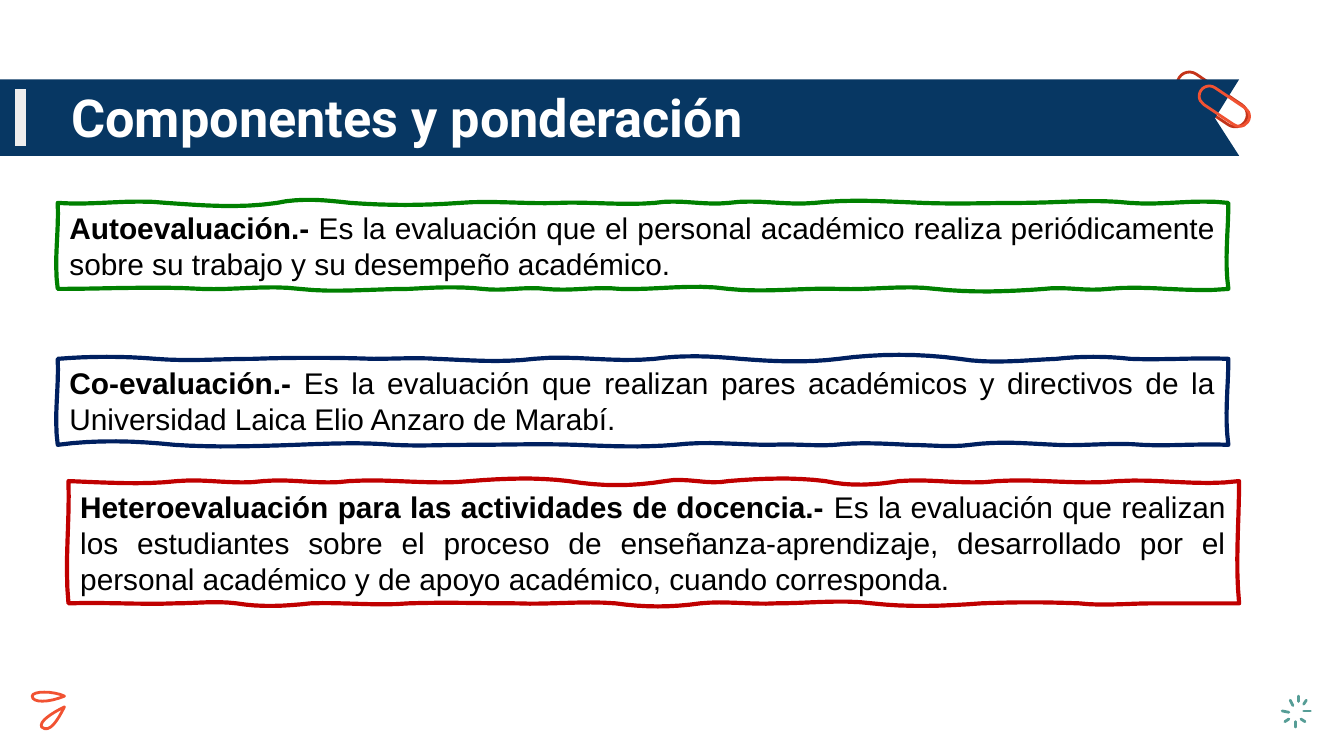
from pptx import Presentation
from pptx.dml.color import RGBColor
from pptx.enum.shapes import MSO_CONNECTOR, MSO_SHAPE
from pptx.enum.text import MSO_ANCHOR, MSO_AUTO_SIZE, PP_ALIGN
from pptx.oxml.ns import qn
from pptx.util import Inches, Pt
from lxml import etree

ROUNDED, STRAIGHT = MSO_SHAPE.ROUNDED_RECTANGLE, MSO_CONNECTOR.STRAIGHT
MIDDLE, NO_AUTOFIT = MSO_ANCHOR.MIDDLE, MSO_AUTO_SIZE.NONE
LEFT, JUSTIFY = PP_ALIGN.LEFT, PP_ALIGN.JUSTIFY

THEME = {
    "banner": RGBColor.from_string("073763"), "tab": RGBColor.from_string("EEEEEE"),
    "white": RGBColor.from_string("FFFFFF"), "black": RGBColor.from_string("000000"),
    "orange": RGBColor.from_string("F15232"), "rust": RGBColor.from_string("C4341A"),
    "teal": RGBColor.from_string("569D96"), "green": RGBColor.from_string("008000"),
    "navy": RGBColor.from_string("002060"), "red": RGBColor.from_string("C00000"),
    "title_font": "Roboto", "body_font": "Arial",
    "title_size": Pt(28), "body_size": Pt(16), "box_line": Pt(2.25), "thin_line": Pt(1.5),
}
# The grid has cells of one inch: 10 columns on a 16:9 slide
CELL = Inches(1)
COLUMNS = 10
CURVE_STEPS = 8

presentation = Presentation()
presentation.slide_width = COLUMNS * CELL
presentation.slide_height = COLUMNS * CELL * 9 // 16
slide = presentation.slides.add_slide(presentation.slide_layouts[5])
shapes = slide.shapes


def add_outline(corners):
    """Draw a closed shape through points given in grid cells."""
    points = [(round(x * CELL), round(y * CELL)) for x, y in corners]
    builder = shapes.build_freeform(*points[0])
    builder.add_line_segments(points[1:], close=True)
    shape = builder.convert_to_shape()
    shape.shadow.inherit = False
    return shape


def add_curved_outline(start, curves, color, width):
    """Draw an unfilled outline from cubic curves (control, control, end)."""
    points, current = [start], start
    for first, second, end in curves:
        for step in range(1, CURVE_STEPS + 1):
            t = step / CURVE_STEPS
            u = 1 - t
            points.append(tuple(
                u**3 * a + 3 * u * u * t * b + 3 * u * t * t * c + t**3 * d
                for a, b, c, d in zip(current, first, second, end)))
        current = end
    shape = add_outline(points)
    shape.fill.background()
    shape.line.color.rgb = color
    shape.line.width = width
    return shape


# Title band and paper clip, from back to front: loop, band, tab, loop
# Clip loops: center column, center row, length, height, color
clip_loops = [(9.02, 0.74, 0.59, 0.18, "rust"), (9.11, 0.79, 0.42, 0.15, "orange")]
bands = [
    ([(0, 0.59), (0, 1.16), (9.22, 1.16), (9.04, 0.88), (9.22, 0.59)], "banner"),
    ([(0.11, 0.66), (0.11, 1.09), (0.19, 1.09), (0.19, 0.66)], "tab"),
]
for (center_x, center_y, length, height, loop_color), (corners, band_color) in zip(
        clip_loops, bands):
    loop = shapes.add_shape(
        ROUNDED, *(round(value * CELL) for value in
                   (center_x - length / 2, center_y - height / 2, length, height)))
    loop.adjustments[0] = 0.5
    loop.rotation = 33.8
    loop.shadow.inherit = False
    loop.fill.background()
    loop.line.color.rgb = THEME[loop_color]
    loop.line.width = THEME["thin_line"]

    band = add_outline(corners)
    band.fill.solid()
    band.fill.fore_color.rgb = THEME[band_color]
    band.line.fill.background()

# Starburst in the bottom right corner
rays = [
    (9.66, 5.18, 9.66, 5.22), (9.6, 5.21, 9.62, 5.25), (9.54, 5.29, 9.59, 5.3),
    (9.56, 5.37, 9.59, 5.35), (9.64, 5.37, 9.64, 5.41), (9.68, 5.35, 9.71, 5.37),
    (9.7, 5.29, 9.75, 5.29), (9.72, 5.21, 9.7, 5.24),
]
for ray_ends in rays:
    ray = shapes.add_connector(STRAIGHT, *(round(value * CELL) for value in ray_ends))
    ray.line.color.rgb = THEME["teal"]
    ray.line.width = THEME["thin_line"]
    ray.element.spPr.find(qn("a:ln")).set("cap", "rnd")
    etree.SubElement(ray.element.spPr, qn("a:effectLst"))

# Two petals in the bottom left corner
petals = [
    ((0.48, 5.18), [((0.4, 5.14), (0.24, 5.14), (0.24, 5.18)),
                    ((0.24, 5.23), (0.36, 5.23), (0.48, 5.18))]),
    ((0.48, 5.26), [((0.38, 5.31), (0.29, 5.37), (0.31, 5.41)),
                    ((0.37, 5.46), (0.43, 5.36), (0.48, 5.26))]),
]
for tip, curves in petals:
    add_curved_outline(tip, curves, THEME["orange"], THEME["thin_line"])

# Title, brought in front of its band
title = shapes.title
title.left, title.top = round(0.43 * CELL), round(0.61 * CELL)
title.width, title.height = round(8.79 * CELL), round(0.52 * CELL)
shapes.element.append(title.element)
frame = title.text_frame
frame.auto_size = NO_AUTOFIT
frame.word_wrap = True
frame.vertical_anchor = MIDDLE
frame.margin_left = frame.margin_right = frame.margin_top = frame.margin_bottom = Inches(0.1)
paragraph = frame.paragraphs[0]
paragraph.alignment = LEFT
run = paragraph.add_run()
run.text = "Componentes y ponderación"
run.font.name = THEME["title_font"]
run.font.size = THEME["title_size"]
run.font.bold = True
run.font.color.rgb = THEME["white"]

# Hand-drawn boxes. Each wave is (end column, first pull, second pull),
# with the pulls in hundredths of a row away from the straight edge.
BOX_WIDTH = 8.71
boxes = [
    {"left": 0.43, "top": 1.51, "height": 0.64, "color": "green",
     "term": "Autoevaluación.- ",
     "meaning": "Es la evaluación que el personal académico realiza periódicamente "
                "sobre su trabajo y su desempeño académico. ",
     "upper": [(1.24, 2, -3), (2.06, 2, 4), (2.61, -4, -2), (3.42, 2, 2), (4.15, -2, 1),
               (4.87, -1, 2), (5.42, -3, 2), (6.06, -3, 2), (6.87, -3, -1), (7.6, 1, 0),
               (8.41, 0, -3), (9.14, 2, -3)],
     "lower": [(8.24, 3, -3), (7.77, 2, -2), (6.96, 2, 3), (6.24, -3, 1), (5.42, -1, 3),
               (4.61, -4, 1), (4.06, -2, 2), (3.59, -2, 2), (3.04, -2, -1), (2.23, 0, 3),
               (1.5, -3, 1), (0.43, -2, 0)]},
    {"left": 0.43, "top": 2.67, "height": 0.64, "color": "navy",
     "term": "Co-evaluación.- ",
     "meaning": "Es la evaluación que realizan pares académicos y directivos de la "
                "Universidad Laica Elio Anzaro de Marabí. ",
     "upper": [(1.16, -2, -2), (1.88, 2, 0), (2.78, -1, -1), (3.25, 0, -1), (3.97, 1, 3),
               (4.87, -3, 3), (5.51, -3, -2), (6.24, 2, 3), (7.14, -4, -4), (7.86, 4, 1),
               (8.41, -2, -2), (9.14, 1, -1)],
     "lower": [(8.5, -1, 1), (7.86, -2, 1), (7.22, -1, -3), (6.76, 2, 0), (6.21, -1, -2),
               (5.74, 1, -1), (5.02, 0, -3), (4.29, 2, 1), (3.48, -1, 0), (2.93, 0, 1),
               (2.2, -2, -1), (1.3, 1, 2), (0.43, -3, -4)]},
    {"left": 0.51, "top": 3.58, "height": 0.91, "color": "red",
     "term": "Heteroevaluación para las actividades de docencia.- ",
     "meaning": "Es la evaluación que realizan los estudiantes sobre el proceso de "
                "enseñanza-aprendizaje, desarrollado por el personal académico y de "
                "apoyo académico, cuando corresponda.",
     "upper": [(1.32, 1, 3), (1.96, -2, 3), (2.6, -2, 3), (3.5, -2, 3), (4.23, -2, -3),
               (4.95, 4, 4), (5.42, -3, 3), (6.14, -2, -3), (6.69, 4, 3), (7.42, -2, 3),
               (8.32, -2, 3), (9.22, -2, 4)],
     "lower": [(8.58, 0, 0), (8.03, 0, 2), (7.3, -1, -1), (6.49, 2, 3), (5.77, -3, 0),
               (5.21, 1, -2), (4.58, 3, 3), (3.85, -2, 1), (3.04, 0, -1), (2.31, 2, -1),
               (1.76, 2, 3), (1.3, -2, 0), (0.51, 1, -1)]},
]
for box in boxes:
    left, top = box["left"], box["top"]
    right, bottom = left + BOX_WIDTH, top + box["height"]
    third = box["height"] / 3
    right_side = ((right, top + third), (right - 0.03, bottom - third), (right, bottom))
    left_side = ((left - 0.03, bottom - third), (left + 0.01, top + third), (left, top))
    curves = []
    for start_x, edge, waves, side in ((left, top, box["upper"], right_side),
                                       (right, bottom, box["lower"], left_side)):
        for end_x, first, second in waves:
            span = (end_x - start_x) / 3
            curves.append(((start_x + span, edge + first / 100),
                           (end_x - span, edge + second / 100), (end_x, edge)))
            start_x = end_x
        curves.append(side)
    shape = add_curved_outline((left, top), curves, THEME[box["color"]], THEME["box_line"])

    frame = shape.text_frame
    frame.word_wrap = True
    frame.auto_size = NO_AUTOFIT
    frame.vertical_anchor = MIDDLE
    paragraph = frame.paragraphs[0]
    paragraph.alignment = JUSTIFY
    for text, bold in ((box["term"], True), (box["meaning"], False)):
        run = paragraph.add_run()
        run.text = text
        run.font.name = THEME["body_font"]
        run.font.size = THEME["body_size"]
        run.font.bold = bold
        run.font.color.rgb = THEME["black"]

presentation.save("out.pptx")
